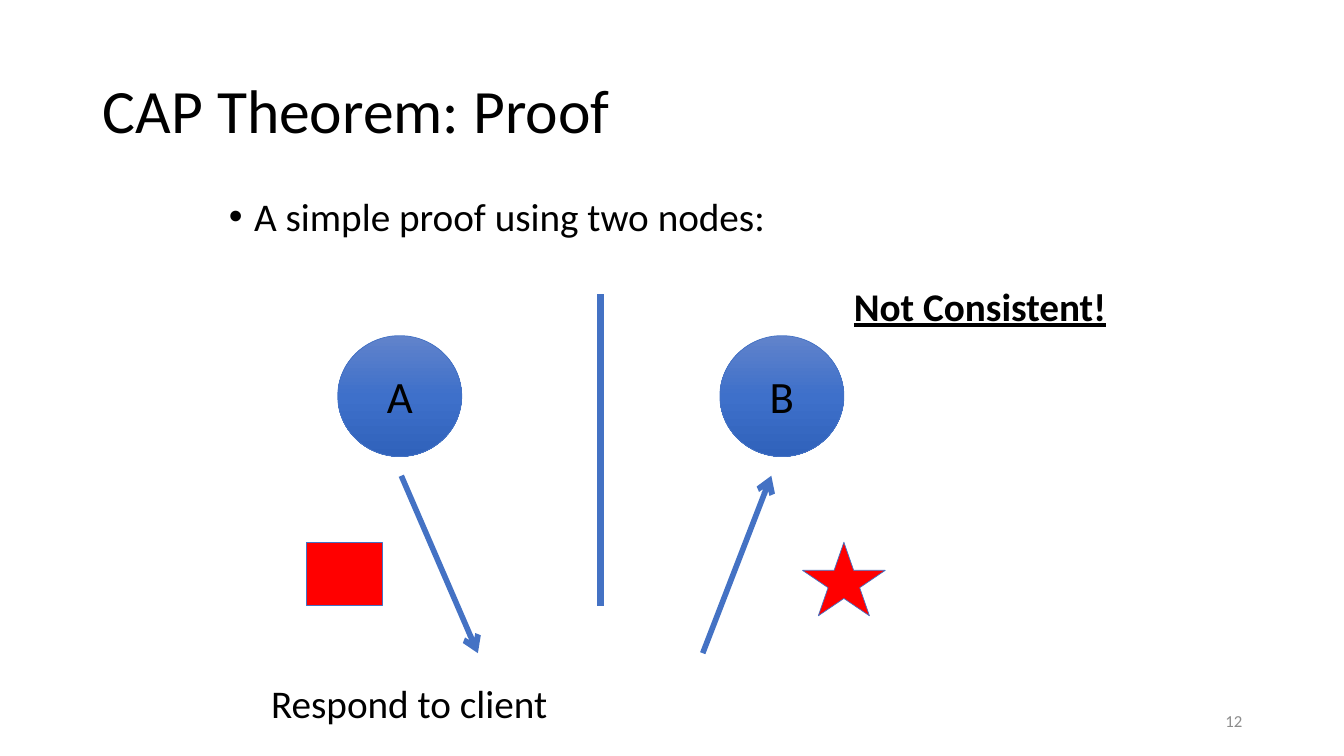
from copy import deepcopy

from pptx import Presentation
from pptx.dml.color import RGBColor
from pptx.enum.shapes import MSO_CONNECTOR, MSO_SHAPE
from pptx.enum.text import MSO_ANCHOR, MSO_AUTO_SIZE, PP_ALIGN
from pptx.oxml.ns import qn
from pptx.oxml.xmlchemy import OxmlElement
from pptx.util import Inches, Pt

BLACK, BLUE, RED, GREY = "000000", "4472C4", "FF0000", "8C8C8C"
NODE_GRADIENT = [(0, "6183CB"), (0.5, "3E70CA"), (1, "3062BB")]


def color(value):
    return RGBColor.from_string(value)


def add_element(parent, tag, **attributes):
    element = OxmlElement(tag)
    for name, value in attributes.items():
        element.set(name, str(value))
    parent.append(element)
    return element


class ProofSlide:
    font_name = "Calibri"

    def __init__(self, presentation):
        self.slide = presentation.slides.add_slide(presentation.slide_layouts[1])
        self.shapes = self.slide.shapes

    def set_text(self, shape, text, size, ink=BLACK, align=PP_ALIGN.LEFT,
                 anchor=MSO_ANCHOR.TOP):
        """Put one styled paragraph in a shape and return the paragraph."""
        frame = shape.text_frame
        frame.text = text
        frame.word_wrap = True
        frame.auto_size = MSO_AUTO_SIZE.NONE
        frame.vertical_anchor = anchor
        paragraph = frame.paragraphs[0]
        paragraph.alignment = align
        paragraph.font.name = self.font_name
        paragraph.font.size = Pt(size)
        paragraph.font.color.rgb = color(ink)
        return paragraph

    def placeholder(self, index, box, text, size, **style):
        shape = self.slide.placeholders[index]
        shape.left, shape.top, shape.width, shape.height = map(Inches, box)
        paragraph = self.set_text(shape, text, size, **style)
        paragraph.line_spacing = 0.9
        return paragraph

    def title(self, box, text):
        self.placeholder(0, box, text, 44, anchor=MSO_ANCHOR.MIDDLE)

    def bullet(self, box, text):
        paragraph = self.placeholder(1, box, text, 28)
        paragraph.space_before = Pt(10)
        properties = paragraph._p.get_or_add_pPr()
        properties.set("marL", str(Inches(0.25)))
        properties.set("indent", str(Inches(-0.25)))
        # The bullet has to come before the default run properties.
        run_defaults = properties.find(qn("a:defRPr"))
        add_element(properties, "a:buFont", typeface="Arial")
        add_element(properties, "a:buChar", char="•")
        if run_defaults is not None:
            properties.append(run_defaults)

    def text(self, box, text, size=28, **style):
        shape = self.shapes.add_textbox(*map(Inches, box))
        return self.set_text(shape, text, size, **style)

    def shape(self, kind, box, fill=RED):
        shape = self.shapes.add_shape(kind, *map(Inches, box))
        shape.shadow.inherit = False
        shape.fill.solid()
        shape.fill.fore_color.rgb = color(fill)
        shape.line.color.rgb = color(BLUE)
        shape.line.width = Pt(0.5)
        return shape

    def node(self, left, name):
        """Draw a gradient circle holding the name of a node."""
        circle = self.shape(MSO_SHAPE.OVAL, (left, 3.33, 1.23, 1.2))
        circle.fill.gradient()
        circle.fill.gradient_angle = 270
        stop_list = circle._element.spPr.find(qn("a:gradFill")).find(qn("a:gsLst"))
        stop_list.append(deepcopy(stop_list[-1]))
        for stop, (position, shade) in zip(circle.fill.gradient_stops, NODE_GRADIENT):
            stop.position = position
            stop.color.rgb = color(shade)
        self.set_text(circle, name, 32, align=PP_ALIGN.CENTER, anchor=MSO_ANCHOR.MIDDLE)

    def line(self, start, end, width, arrow=False):
        points = map(Inches, (*start, *end))
        connector = self.shapes.add_connector(MSO_CONNECTOR.STRAIGHT, *points)
        connector.line.color.rgb = color(BLUE)
        connector.line.width = Pt(width)
        properties = connector._element.spPr
        if arrow:
            add_element(properties.find(qn("a:ln")), "a:tailEnd", type="arrow")
        add_element(properties, "a:effectLst")


def main():
    presentation = Presentation()
    presentation.slide_width = Inches(13.33)
    presentation.slide_height = Inches(7.5)

    proof = ProofSlide(presentation)
    proof.title((0.92, 0.4, 11.5, 1.45), "CAP Theorem: Proof")
    proof.bullet((2.17, 1.91, 8.04, 0.91), "A simple proof using two nodes:")

    proof.node(3.35, "A")
    proof.node(7.14, "B")
    proof.line((5.96, 2.92), (5.96, 6.01), 5)
    proof.line((6.97, 6.48), (7.65, 4.72), 4, arrow=True)
    proof.shape(MSO_SHAPE.STAR_5_POINT, (7.96, 5.38, 0.82, 0.73))
    proof.line((3.98, 4.72), (4.74, 6.48), 4, arrow=True)
    proof.shape(MSO_SHAPE.RECTANGLE, (3.04, 5.38, 0.75, 0.63))

    verdict = proof.text((8.37, 2.75, 3.06, 0.57), "Not Consistent!")
    verdict.font.bold = True
    verdict.font.underline = True
    proof.text((2.59, 6.69, 3.98, 0.57), "Respond to client")
    proof.text((9.42, 6.95, 3, 0.4), "12", 12, ink=GREY,
               align=PP_ALIGN.RIGHT, anchor=MSO_ANCHOR.MIDDLE)

    presentation.save("out.pptx")


if __name__ == "__main__":
    main()
